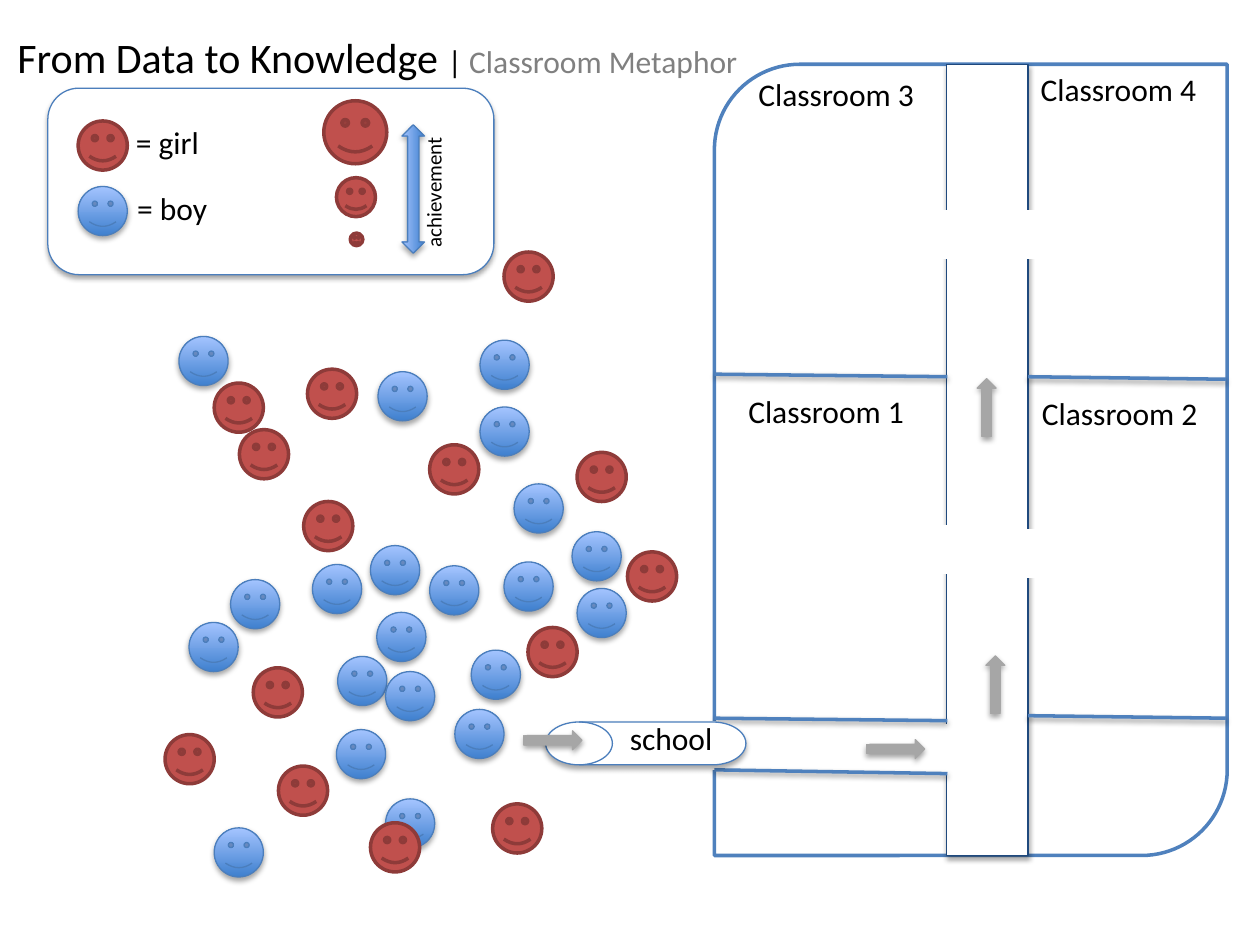
from lxml.etree import SubElement
from pptx import Presentation
from pptx.dml.color import RGBColor
from pptx.enum.shapes import MSO_CONNECTOR, MSO_SHAPE
from pptx.enum.text import MSO_AUTO_SIZE
from pptx.oxml.ns import qn
from pptx.util import Cm, Pt

THEME = {
    "font": "Calibri",
    "title": 24, "body": 18, "small": 12,
    "ink": "000000", "muted": "808080",
}
SHADE = {"blur": 3.1, "distance": 1.8, "alpha": 35}
WALL_SHADE = {"blur": 3.1, "distance": 1.6, "alpha": 38}
BLUE = ("3F80CE", "A4C4FF")  # gradient, bottom to top
STYLES = {
    "panel": {"fill": "FFFFFF", "line": "4B7EBC", "width": 0.75, "shade": SHADE},
    "school": {"fill": "FFFFFF", "line": "4F81BD", "width": 2, "shade": None},
    "corridor": {"fill": "FFFFFF", "line": "1F497D", "width": 0.75, "shade": SHADE},
    "door": {"fill": "FFFFFF", "line": "FFFFFF", "width": 0.75, "shade": None},
    "girl": {"fill": "C0504D", "line": "8E3B39", "width": 2, "shade": None},
    "boy": {"fill": BLUE, "line": "4B7EBC", "width": 0.75, "shade": SHADE},
    "route": {"fill": "A6A6A6", "line": "A6A6A6", "width": 0.75, "shade": SHADE},
}

# All positions are in grid units; one unit is 2.54 cm
UNIT = 2.54
FACE = 0.39
DOOR = (0.4, 0.38)
ROUTE = (0.46, 0.15)

# Building: x of the outer walls and of the corridor
LEFT, HALL_LEFT, HALL_RIGHT, RIGHT = 5.67, 7.52, 8.16, 9.73
WALLS = [  # from x, to x, from y, to y
    (LEFT, HALL_LEFT, 2.97, 2.99), (HALL_RIGHT, RIGHT, 2.99, 3.01),
    (HALL_RIGHT, RIGHT, 5.68, 5.7), (LEFT, HALL_LEFT, 5.7, 5.72),
    (LEFT, HALL_LEFT, 6.11, 6.14),
]
ENTRANCES = [(5.53, 5.73), (7.32, 5.75)]
ROOM_DOORS = [(7.96, 4.2), (7.31, 4.17), (8.12, 1.67), (7.31, 1.67)]
ROUTES = [(6.88, 5.87, 0), (7.67, 5.36, 270), (7.6, 3.16, 270)]

# Pupils outside the school
PUPILS = {
    "boy": [
        (3, 2.95), (1.5, 4.94), (2.48, 4.48), (2.99, 4.86), (3.41, 4.49),
        (1.83, 4.6), (3.61, 5.63), (4.58, 4.67), (2.67, 5.79), (3.06, 6.34),
        (2.68, 5.21), (3.06, 5.33), (1.7, 6.57), (2.94, 4.33), (4, 4.46),
        (4.54, 4.22), (3.81, 2.7), (3.74, 5.16), (3.81, 3.23), (1.42, 2.67),
        (4.08, 3.84),
    ],
    "girl": [
        (2.44, 2.93), (1.9, 3.41), (2.41, 3.98), (3.41, 3.53), (2.21, 6.08),
        (2.01, 5.3), (4.19, 4.98), (4, 2), (2.94, 6.53), (4.98, 4.38),
        (1.7, 3.04), (1.31, 5.83), (3.91, 6.38), (4.58, 3.59),
    ],
}
LEGEND_FACES = [
    ("girl", 0.62, 0.96, FACE), ("boy", 0.62, 1.48, FACE),
    ("girl", 2.57, 0.8, 0.5), ("girl", 2.67, 1.41, 0.31), ("girl", 2.78, 1.85, 0.1),
]

TITLE = [
    ("From Data to Knowledge ", "title", "ink"),
    ("| ", "body", "ink"),
    ("Classroom Metaphor", "body", "muted"),
]
LABELS = [
    ("Classroom 1", 5.84, 3.06, 1.45), ("Classroom 2", 8.17, 3.08, 1.45),
    ("Classroom 3", 5.92, 0.55, 1.45), ("Classroom 4", 8.16, 0.51, 1.45),
    ("school", 4.9, 5.66, 0.86), ("= girl", 0.98, 0.93, 0.71), ("= boy", 0.99, 1.45, 0.76),
]


def grid(*values):
    return [Cm(value * UNIT) for value in values]


def set_all(target, values):
    for name, value in values.items():
        setattr(target, name, value)


def add_shade(effects, shade):
    shadow = SubElement(effects, qn("a:outerShdw"), {
        "blurRad": str(Pt(shade["blur"])), "dist": str(Pt(shade["distance"])),
        "dir": "5400000", "rotWithShape": "0",
    })
    color = SubElement(shadow, qn("a:srgbClr"), val=THEME["ink"])
    SubElement(color, qn("a:alpha"), val=str(shade["alpha"] * 1000))


def paint_line(line, color, width):
    line.color.rgb = RGBColor.from_string(color)
    line.width = Pt(width)


def add_figure(page, kind, style_name, left, top, width, height, rotation=0):
    style = STYLES[style_name]
    shape = page.shapes.add_shape(kind, *grid(left, top, width, height))
    shape.rotation = rotation
    if isinstance(style["fill"], tuple):
        shape.fill.gradient()
        shape.fill.gradient_angle = 90
        for stop, color in zip(shape.fill.gradient_stops, style["fill"]):
            stop.color.rgb = RGBColor.from_string(color)
    else:
        shape.fill.solid()
        shape.fill.fore_color.rgb = RGBColor.from_string(style["fill"])
    paint_line(shape.line, style["line"], style["width"])
    shape.shadow.inherit = False
    if style["shade"]:
        add_shade(shape._element.spPr.find(qn("a:effectLst")), style["shade"])


def add_face(page, who, left, top, size=FACE):
    add_figure(page, MSO_SHAPE.SMILEY_FACE, who, left, top, size, size)


def add_route(page, left, top, rotation=0):
    add_figure(page, MSO_SHAPE.STRIPED_RIGHT_ARROW, "route", left, top, *ROUTE, rotation)


def add_wall(page, start_x, end_x, start_y, end_y):
    wall = page.shapes.add_connector(
        MSO_CONNECTOR.STRAIGHT, *grid(start_x, start_y, end_x, end_y))
    paint_line(wall.line, STYLES["school"]["line"], STYLES["school"]["width"])
    add_shade(SubElement(wall._element.spPr, qn("a:effectLst")), WALL_SHADE)


def add_text(page, spans, left, top, width, height=0.4, rotation=0, wrap=False):
    box = page.shapes.add_textbox(*grid(left, top, width, height))
    box.rotation = rotation
    set_all(box.text_frame, {"word_wrap": wrap, "auto_size": MSO_AUTO_SIZE.SHAPE_TO_FIT_TEXT})
    para = box.text_frame.paragraphs[0]
    for text, size, color in spans:
        span = para.add_run()
        span.text = text
        set_all(span.font, {"name": THEME["font"], "size": Pt(THEME[size])})
        span.font.color.rgb = RGBColor.from_string(THEME[color])


def main():
    deck = Presentation()
    set_all(deck, {"slide_width": Cm(25.4), "slide_height": Cm(19.05)})
    page = deck.slides.add_slide(deck.slide_layouts[6])

    # Legend panel and building
    add_figure(page, MSO_SHAPE.ROUNDED_RECTANGLE, "panel", 0.38, 0.7, 3.54, 1.48)
    add_figure(page, MSO_SHAPE.ROUND_2_DIAG_RECTANGLE, "school", LEFT, 0.51, 4.07, 6.28)
    add_figure(page, MSO_SHAPE.RECTANGLE, "corridor", 7.51, 0.51, 0.65, 6.28)
    for left, top in ENTRANCES:
        add_figure(page, MSO_SHAPE.RECTANGLE, "door", left, top, *DOOR)
    for wall in WALLS:
        add_wall(page, *wall)
    for left, top in ROOM_DOORS:
        add_figure(page, MSO_SHAPE.RECTANGLE, "door", left, top, *DOOR)

    # Pupils
    for who, places in PUPILS.items():
        for left, top in places:
            add_face(page, who, left, top)

    # Way into the school
    for route in ROUTES:
        add_route(page, *route)
    add_figure(page, MSO_SHAPE.FLOWCHART_DIRECT_ACCESS_STORAGE, "panel",
               4.33, 5.73, 1.59, 0.34, 180)
    add_route(page, 4.16, 5.8)

    # Legend content
    for face in LEGEND_FACES:
        add_face(page, *face)
    add_figure(page, MSO_SHAPE.LEFT_RIGHT_ARROW, "boy", 2.77, 1.41, 1.02, 0.18, 270)

    # Wording
    add_text(page, TITLE, 0.04, 0.2, 6.01, 0.5)
    for text, left, top, width in LABELS:
        add_text(page, [(text, "body", "ink")], left, top, width)
    add_text(page, [("achievement", "small", "ink")], 2.89, 1.36, 1.1, 0.3, 270, True)

    deck.save("out.pptx")


if __name__ == "__main__":
    main()
